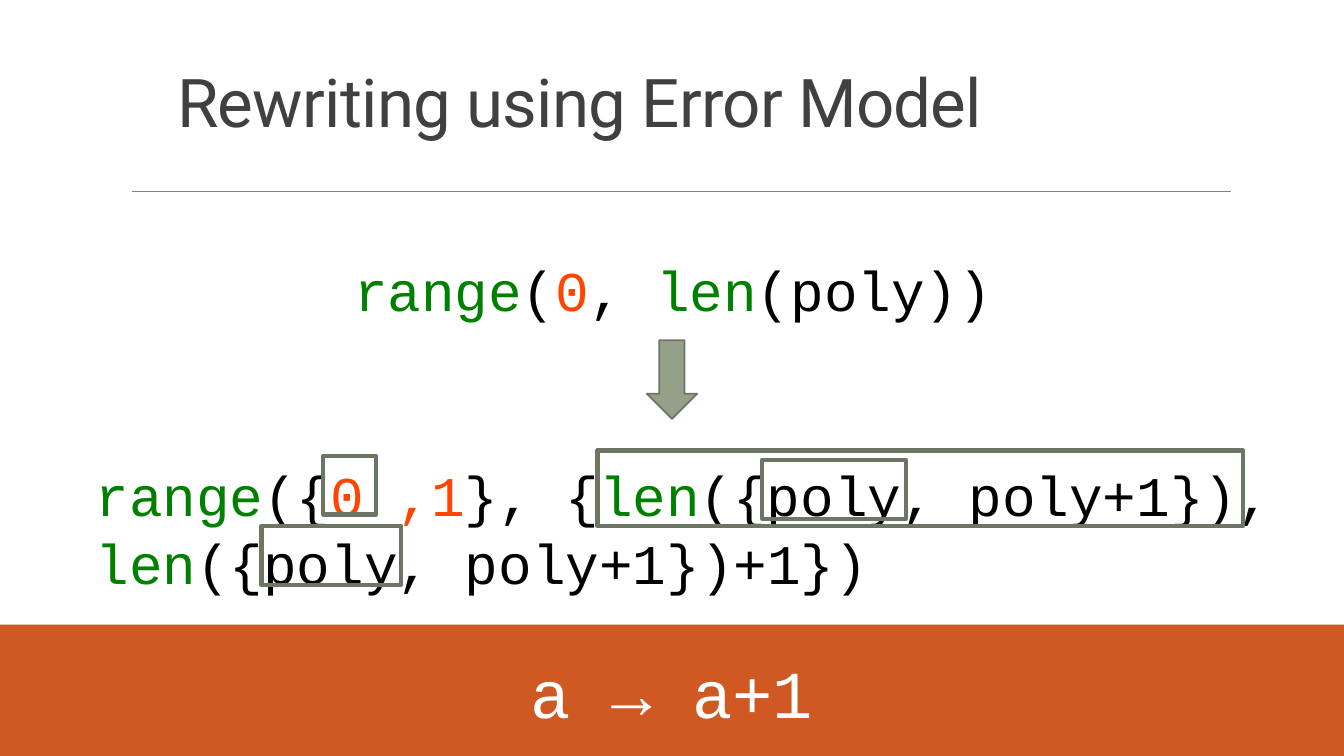
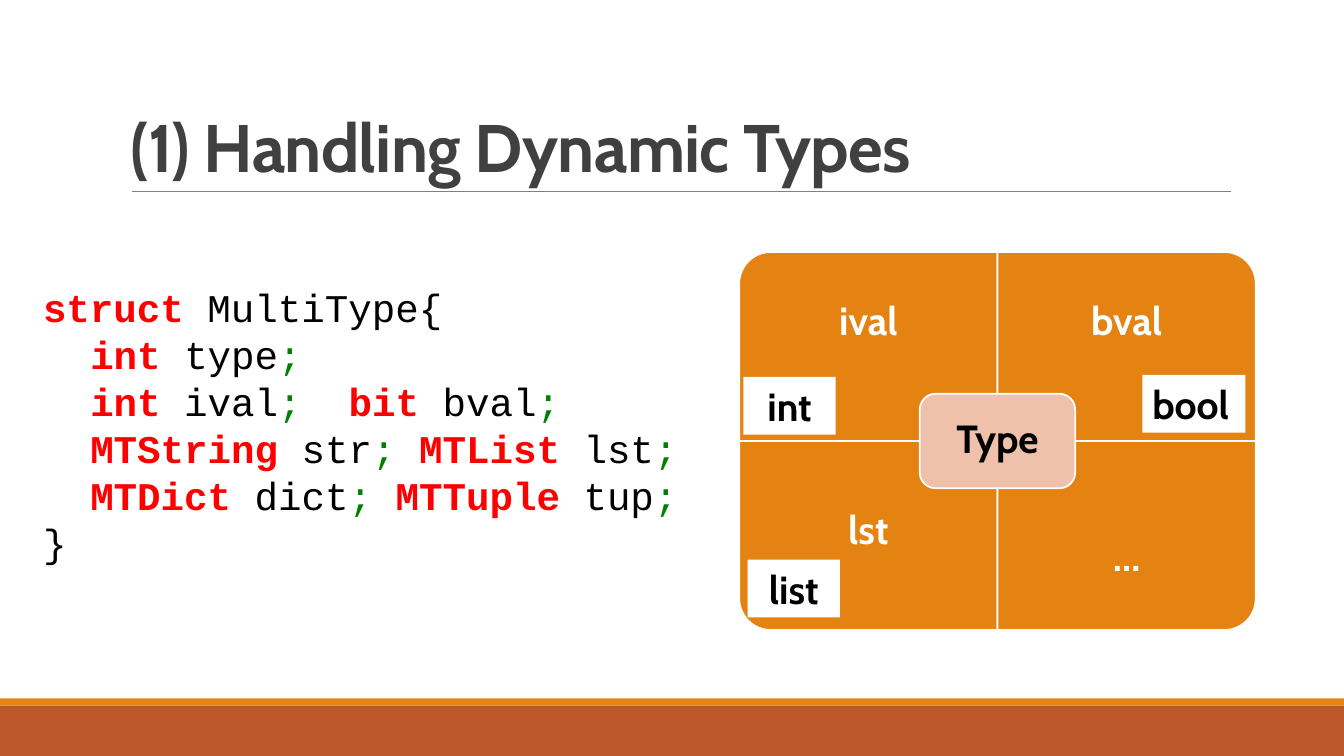
from dataclasses import dataclass
from typing import Any, NamedTuple

from lxml import etree
from pptx import Presentation
from pptx import util as u
from pptx.dml.color import RGBColor
from pptx.enum import shapes, text
from pptx.oxml import ns

# Shared scale, colours and fonts
PX = 9525  # EMU per px, 96 px to the inch
WIDTH, HEIGHT = 1280, 720
ORANGE, RUST, BAND_ORANGE, PEACH = "E48312", "BD582C", "CF5823", "EFC1AB"
SAGE, SAGE_DARK = "94A088", "6D7665"
WHITE, BLACK, GREY, TITLE_GREY = "FFFFFF", "000000", "808080", "404040"
GREEN, RED, NUMBER = "008000", "FF0000", "FF4500"
CODE_FONT, LABEL_FONT = "Courier New", "Cabin"
CODE_LEADING = 1.2

Kind = shapes.MSO_SHAPE
Align = text.PP_ALIGN
Anchor = text.MSO_ANCHOR


class Box(NamedTuple):
    left: int
    top: int
    width: int
    height: int


class Token(NamedTuple):
    words: str
    color: str = BLACK
    bold: bool = False


@dataclass(frozen=True)
class CodeLine:
    tokens: list[Token]
    indent: int = 0


@dataclass(frozen=True)
class Quadrant:
    label: str
    column: int
    row: int
    rotation: int
    label_top: int


@dataclass(frozen=True)
class Tag:
    label: str
    box: Box
    align: Any = Align.CENTER


def rgb(color: str) -> RGBColor:
    return RGBColor.from_string(color)


def emu(box: Box) -> list[int]:
    return [length * PX for length in box]


def apply(target: Any, formats: dict[str, Any]) -> None:
    for name, value in formats.items():
        setattr(target, name, value)


def style_run(run: Any, font: str, size: int, color: str, bold: bool) -> None:
    apply(run.font, {"name": font, "size": u.Pt(size), "bold": bold})
    run.font.color.rgb = rgb(color)


def set_frame(frame: Any, anchor: Any, inset: int | None = None) -> None:
    apply(frame, {"word_wrap": True, "auto_size": text.MSO_AUTO_SIZE.NONE,
                  "vertical_anchor": anchor})
    if inset is not None:
        sides = ("left", "top", "right", "bottom")
        apply(frame, {f"margin_{side}": inset * PX for side in sides})


# Drawing functions
def add_block(slide: Any, kind: Any, box: Box, fill: str | None = None,
              line: str | None = None, weight: float = 1.25, rotation: int = 0) -> Any:
    block = slide.shapes.add_shape(kind, *emu(box))
    block.shadow.inherit = False
    block.rotation = rotation
    if fill:
        block.fill.solid()
        block.fill.fore_color.rgb = rgb(fill)
    else:
        block.fill.background()
    if line:
        block.line.color.rgb = rgb(line)
        block.line.width = u.Pt(weight)
    else:
        block.line.fill.background()
    return block


def write_label(frame: Any, words: str, color: str, align: Any = Align.CENTER,
                spacing: float = 1.0, inset: int | None = None) -> None:
    set_frame(frame, Anchor.MIDDLE, inset)
    paragraph = frame.paragraphs[0]
    apply(paragraph, {"alignment": align, "line_spacing": spacing})
    run = paragraph.add_run()
    run.text = words
    style_run(run, LABEL_FONT, 28, color, True)


def add_code(slide: Any, box: Box, lines: list[CodeLine], size: int,
             align: Any = Align.LEFT) -> None:
    frame = slide.shapes.add_textbox(*emu(box)).text_frame
    set_frame(frame, Anchor.TOP, 0)
    for number, line in enumerate(lines):
        paragraph = frame.add_paragraph() if number else frame.paragraphs[0]
        apply(paragraph, {"alignment": align,
                          "line_spacing": u.Pt(size * CODE_LEADING)})
        if line.indent:
            paragraph._p.get_or_add_pPr().set("marL", str(line.indent * PX))
        for token in line.tokens:
            run = paragraph.add_run()
            run.text = token.words
            style_run(run, CODE_FONT, size, token.color, token.bold)


def add_titled_slide(deck: Any, title: str, box: Box, font: str, bold: bool) -> Any:
    slide = deck.slides.add_slide(deck.slide_layouts[5])
    # Footer bands and title rule
    add_block(slide, Kind.RECTANGLE, Box(0, 672, WIDTH, 48), RUST)
    add_block(slide, Kind.RECTANGLE, Box(0, 665, WIDTH, 7), ORANGE)
    rule = slide.shapes.add_connector(
        shapes.MSO_CONNECTOR.STRAIGHT, *emu(Box(126, 182, 1172, 182)))
    rule.line.color.rgb = rgb(GREY)
    rule.line.width = u.Pt(0.5)
    etree.SubElement(rule._element.spPr, ns.qn("a:effectLst"))
    # Title
    heading = slide.shapes.title
    apply(heading, dict(zip(("left", "top", "width", "height"), emu(box))))
    set_frame(heading.text_frame, Anchor.BOTTOM)
    paragraph = heading.text_frame.paragraphs[0]
    apply(paragraph, {"alignment": Align.LEFT, "line_spacing": 0.85})
    run = paragraph.add_run()
    run.text = title
    style_run(run, font, 48, TITLE_GREY, bold)
    run.font._element.set("spc", "-50")
    return slide


# Slide 1: rewriting
CALL = [CodeLine([
    Token("range", GREEN), Token("("), Token("0", NUMBER), Token(", "),
    Token("len", GREEN), Token("(poly))")])]
REWRITTEN = [CodeLine([
    Token("range", GREEN), Token("({"), Token("0 ,1", NUMBER), Token("}, {"),
    Token("len", GREEN), Token("({poly, poly+1}), "),
    Token("len", GREEN), Token("({poly, poly+1})+1})")])]
ERROR_RULE = [CodeLine([Token("a → a+1", WHITE)])]
REWRITE_MARKS = [
    Box(308, 434, 50, 56),   # 0
    Box(726, 438, 137, 56),  # first poly
    Box(249, 501, 133, 56),  # second poly
    Box(569, 429, 615, 72),  # len call
]


def build_rewriting(deck: Any) -> None:
    slide = add_titled_slide(deck, "Rewriting using Error Model",
                             Box(159, 75, 839, 64), "Roboto", False)
    add_block(slide, Kind.RECTANGLE, Box(0, 595, WIDTH, 126), BAND_ORANGE)
    add_code(slide, Box(251, 243, 780, 64), CALL, 40, Align.CENTER)
    add_code(slide, Box(109, 620, 1062, 77), ERROR_RULE, 48, Align.CENTER)
    add_code(slide, Box(91, 439, 1157, 128), REWRITTEN, 40)
    add_block(slide, Kind.DOWN_ARROW, Box(616, 324, 48, 75), SAGE, SAGE_DARK)
    for mark in REWRITE_MARKS:
        add_block(slide, Kind.RECTANGLE, mark, line=SAGE_DARK, weight=3)


# Slide 2: dynamic types
def keyword(words: str) -> Token:
    return Token(words, RED, True)


INDENT = 45
END = Token(";", GREEN)
NEXT = Token("; ", GREEN)
STRUCT = [
    CodeLine([keyword("struct "), Token("MultiType{")]),
    CodeLine([keyword("int "), Token("type"), END], INDENT),
    CodeLine([keyword("int"), Token(" ival"), Token(";  ", GREEN),
              keyword("bit "), Token("bval"), END], INDENT),
    CodeLine([keyword("MTString "), Token("str"), NEXT,
              keyword("MTList "), Token("lst"), END], INDENT),
    CodeLine([keyword("MTDict "), Token("dict"), NEXT,
              keyword("MTTuple "), Token("tup"), END], INDENT),
    CodeLine([Token("}")]),
]
GRID = Box(704, 240, 492, 360)
QUADRANTS = [
    Quadrant("ival", 0, 0, 270, 240),
    Quadrant("bval", 1, 0, 0, 240),
    Quadrant("lst", 0, 1, 180, 439),
    Quadrant("…", 1, 1, 90, 465),
]
TAGS = [
    Tag("int", Box(708, 359, 88, 55)),
    Tag("bool", Box(1088, 357, 98, 55), Align.LEFT),
    Tag("list", Box(712, 533, 88, 55)),
]


def add_quadrant(slide: Any, quadrant: Quadrant) -> None:
    width, height = GRID.width // 2, GRID.height // 2
    left = GRID.left + quadrant.column * width
    top = GRID.top + quadrant.row * height
    cell = Box(left, top, width, height)
    if quadrant.rotation % 180:  # a quarter turn swaps the sides
        shift = (width - height) // 2
        cell = Box(left + shift, top - shift, height, width)
    add_block(slide, Kind.ROUND_1_RECTANGLE, cell, ORANGE, WHITE,
              rotation=quadrant.rotation)
    label = slide.shapes.add_textbox(*emu(Box(left, quadrant.label_top, width, 135)))
    write_label(label.text_frame, quadrant.label, WHITE, spacing=0.9, inset=21)


def build_dynamic_types(deck: Any) -> None:
    slide = add_titled_slide(deck, "(1) Handling Dynamic Types",
                             Box(115, 30, 1056, 152), LABEL_FONT, True)
    for quadrant in QUADRANTS:
        add_quadrant(slide, quadrant)
    hub = add_block(slide, Kind.ROUNDED_RECTANGLE, Box(876, 375, 148, 90), PEACH, WHITE)
    write_label(hub.text_frame, "Type", BLACK, spacing=0.9, inset=12)
    for tag in TAGS:
        block = add_block(slide, Kind.RECTANGLE, tag.box, WHITE)
        write_label(block.text_frame, tag.label, BLACK, tag.align)
    add_code(slide, Box(41, 270, 672, 270), STRUCT, 28)


def main() -> None:
    deck = Presentation()
    apply(deck, {"slide_width": WIDTH * PX, "slide_height": HEIGHT * PX})
    build_rewriting(deck)
    build_dynamic_types(deck)
    deck.save("out.pptx")


if __name__ == "__main__":
    main()
